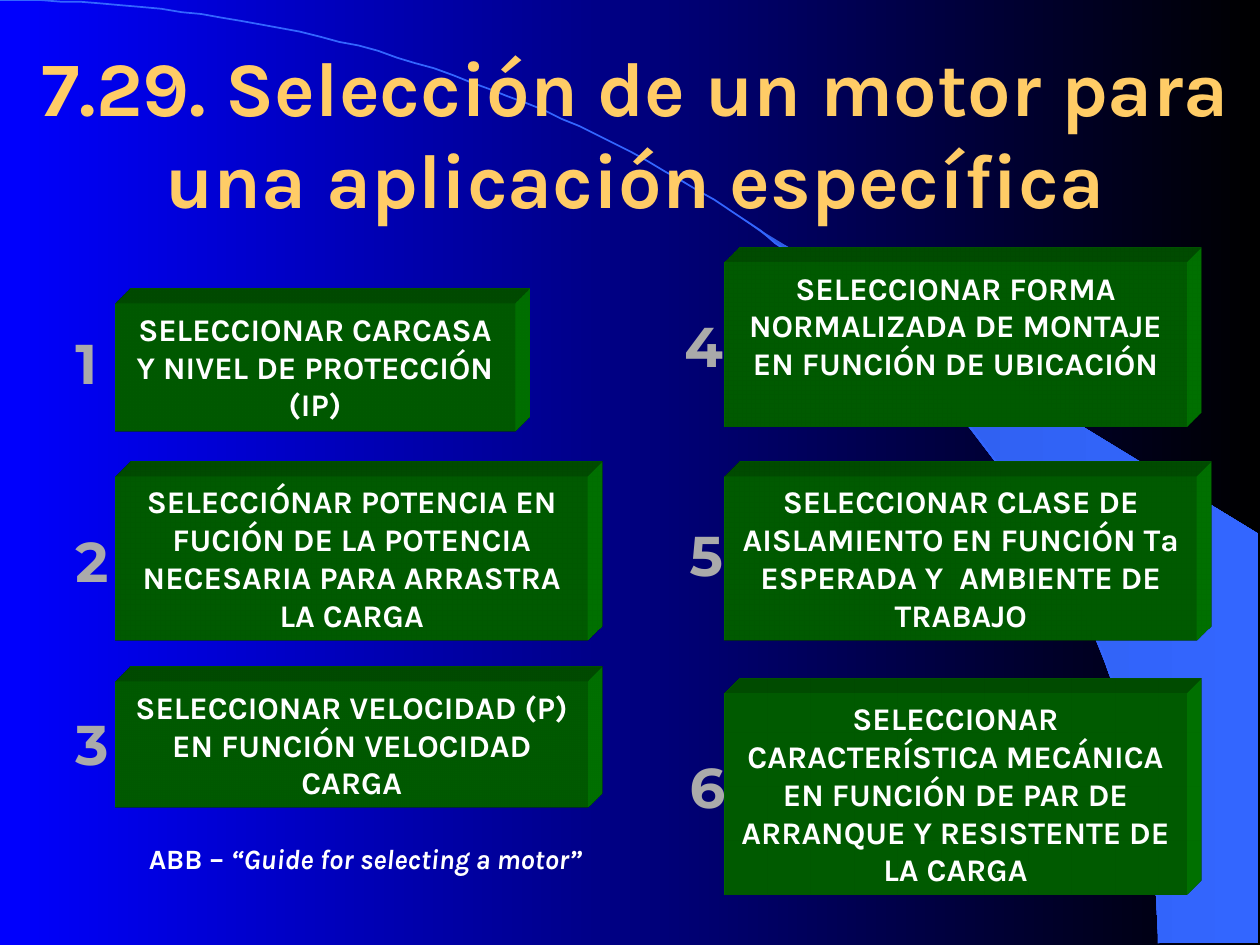
import math

from lxml import etree
from pptx import Presentation
from pptx.dml.color import RGBColor
from pptx.enum import shapes, text
from pptx.util import Pt

THEME = {
    "body_font": "Karla", "number_font": "Montserrat",
    "title_size": 44, "step_size": 18, "number_size": 32, "source_size": 16,
    "title": "FFCC66", "text": "FFFFFF", "box": "008000", "arc": "3366FF",
    "background": ("0000FF", "000000"),
    "crescent": ("2E5DE7", "3366FF"),
    "number": ("AAAAAA", "FFFFFF"),
}
WIDTH, HEIGHT = 720, 540
ARC_WIDTH, ARC_HEIGHT, ARC_STEPS = 662.4, 539.3, 90
LEFT_COLUMN, RIGHT_COLUMN = 66, 414
NUMBER_SIZE = (20.9, 44.6)

TITLE = "7.29. Selección de un motor para una aplicación específica"
SOURCE = [("ABB – ", False), ("“Guide for selecting a motor”", True)]
STEPS = [
    ("SELECCIONAR CARCASA Y NIVEL DE PROTECCIÓN (IP)",
     (LEFT_COLUMN, 173.5, 228, 73), (36, 184.3)),
    ("SELECCIÓNAR POTENCIA EN FUCIÓN DE LA POTENCIA NECESARIA PARA ARRASTRA LA CARGA",
     (LEFT_COLUMN, 272, 270, 94), (36, 297.4)),
    ("SELECCIONAR VELOCIDAD (P) EN FUNCIÓN VELOCIDAD CARGA",
     (LEFT_COLUMN, 389.5, 270, 72), (36, 401.8)),
    ("SELECCIONAR FORMA NORMALIZADA DE MONTAJE EN FUNCIÓN DE UBICACIÓN",
     (RIGHT_COLUMN, 150, 264, 94), (384, 174.2)),
    ("SELECCIONAR CLASE DE AISLAMIENTO EN FUNCIÓN Tª ESPERADA Y  AMBIENTE DE TRABAJO",
     (RIGHT_COLUMN, 272, 270, 94), (387, 293.8)),
    ("SELECCIONAR CARACTERÍSTICA MECÁNICA EN FUNCIÓN DE PAR DE ARRANQUE Y RESISTENTE DE LA CARGA",
     (RIGHT_COLUMN, 396, 264, 115), (387, 426.2)),
]
CRESCENT = [
    (662.4, 538.6), (719.3, 539.3), (719.3, 304.6), (424.1, 124.6),
    (449.3, 143.3), (470.2, 159.8), (493.2, 180), (515.5, 201.6),
    (548.6, 237.6), (578.2, 276.5), (599, 310.3), (617.8, 344.9),
    (632.2, 380.2), (643, 411.8), (650.2, 438.5), (657.4, 472.3),
    (660.2, 501.1),
]
DRAWING = "http://schemas.openxmlformats.org/drawingml/2006/main"
EXTRUSION = f"""<r xmlns:a="{DRAWING}">
<a:scene3d><a:camera prst="legacyObliqueTopRight"/><a:lightRig rig="legacyFlat3" dir="b"/></a:scene3d>
<a:sp3d extrusionH="304800" prstMaterial="legacyMatte">
<a:extrusionClr><a:srgbClr val="{THEME['box']}"/></a:extrusionClr></a:sp3d></r>"""


def color(name):
    return RGBColor.from_string(THEME[name])


def set_gradient(fill, name, angle):
    fill.gradient()
    fill.gradient_angle = angle
    for stop, value, position in zip(fill.gradient_stops, THEME[name], (0, 1)):
        stop.color.rgb = RGBColor.from_string(value)
        stop.position = position


def add_outline(slide, points, close):
    builder = slide.shapes.build_freeform(*points[0], scale=Pt(1))
    builder.add_line_segments(points[1:], close=close)
    shape = builder.convert_to_shape()
    shape.shadow.inherit = False
    return shape


def add_text_box(slide, left, top, width, height, wrap):
    shape = slide.shapes.add_textbox(Pt(left), Pt(top), Pt(width), Pt(height))
    shape.text_frame.word_wrap = wrap
    return shape


def style_run(run, font_name, size):
    run.font.name = THEME[font_name]
    run.font.size = Pt(THEME[size])
    run.font.bold = True


def write(shape, content, font_name, size, color_name=None):
    paragraph = shape.text_frame.paragraphs[0]
    paragraph.alignment = text.PP_ALIGN.CENTER
    for words, italic in content:
        run = paragraph.add_run()
        run.text = words
        style_run(run, font_name, size)
        if italic:
            run.font.italic = True
        if color_name:
            run.font.color.rgb = color(color_name)
    return paragraph


def add_backdrop(slide):
    set_gradient(slide.background.fill, "background", 0)
    crescent = add_outline(slide, CRESCENT, True)
    set_gradient(crescent.fill, "crescent", 0)
    crescent.line.fill.background()
    angles = [math.pi / 2 * step / ARC_STEPS for step in range(ARC_STEPS + 1)]
    points = [(ARC_WIDTH * math.sin(angle), ARC_HEIGHT * (1 - math.cos(angle)))
              for angle in angles]
    arc = add_outline(slide, points, False)
    arc.fill.background()
    arc.line.color.rgb = color("arc")
    arc.line.width = Pt(1)


def add_step(slide, number, words, box, number_place):
    shape = slide.shapes.add_shape(shapes.MSO_SHAPE.RECTANGLE, *map(Pt, box))
    shape.shadow.inherit = False
    shape.fill.solid()
    shape.fill.fore_color.rgb = color("box")
    shape.line.fill.background()
    for element in list(etree.fromstring(EXTRUSION)):
        shape.element.spPr.append(element)
    shape.text_frame.word_wrap = True
    shape.text_frame.vertical_anchor = text.MSO_ANCHOR.TOP
    write(shape, [(words, False)], "body_font", "step_size", "text")

    label = add_text_box(slide, *number_place, *NUMBER_SIZE, False)
    paragraph = write(label, [(str(number), False)], "number_font", "number_size")
    run = paragraph.runs[0]
    set_gradient(run.font.fill, "number", 270)
    run.font.fill.gradient_angle = 270
    run._r.get_or_add_rPr().set("spc", "640")


def main():
    presentation = Presentation()
    presentation.slide_width, presentation.slide_height = Pt(WIDTH), Pt(HEIGHT)
    slide = presentation.slides.add_slide(presentation.slide_layouts[6])
    add_backdrop(slide)
    title = add_text_box(slide, 12.2, 30.2, 702, 90, True)
    title.text_frame.vertical_anchor = text.MSO_ANCHOR.MIDDLE
    write(title, [(TITLE, False)], "body_font", "title_size", "title")
    for number, step in enumerate(STEPS, 1):
        add_step(slide, number, *step)
    source = add_text_box(slide, 57.6, 477.4, 302.4, 26.6, False)
    write(source, SOURCE, "body_font", "source_size", "text")
    presentation.save("out.pptx")


if __name__ == "__main__":
    main()
